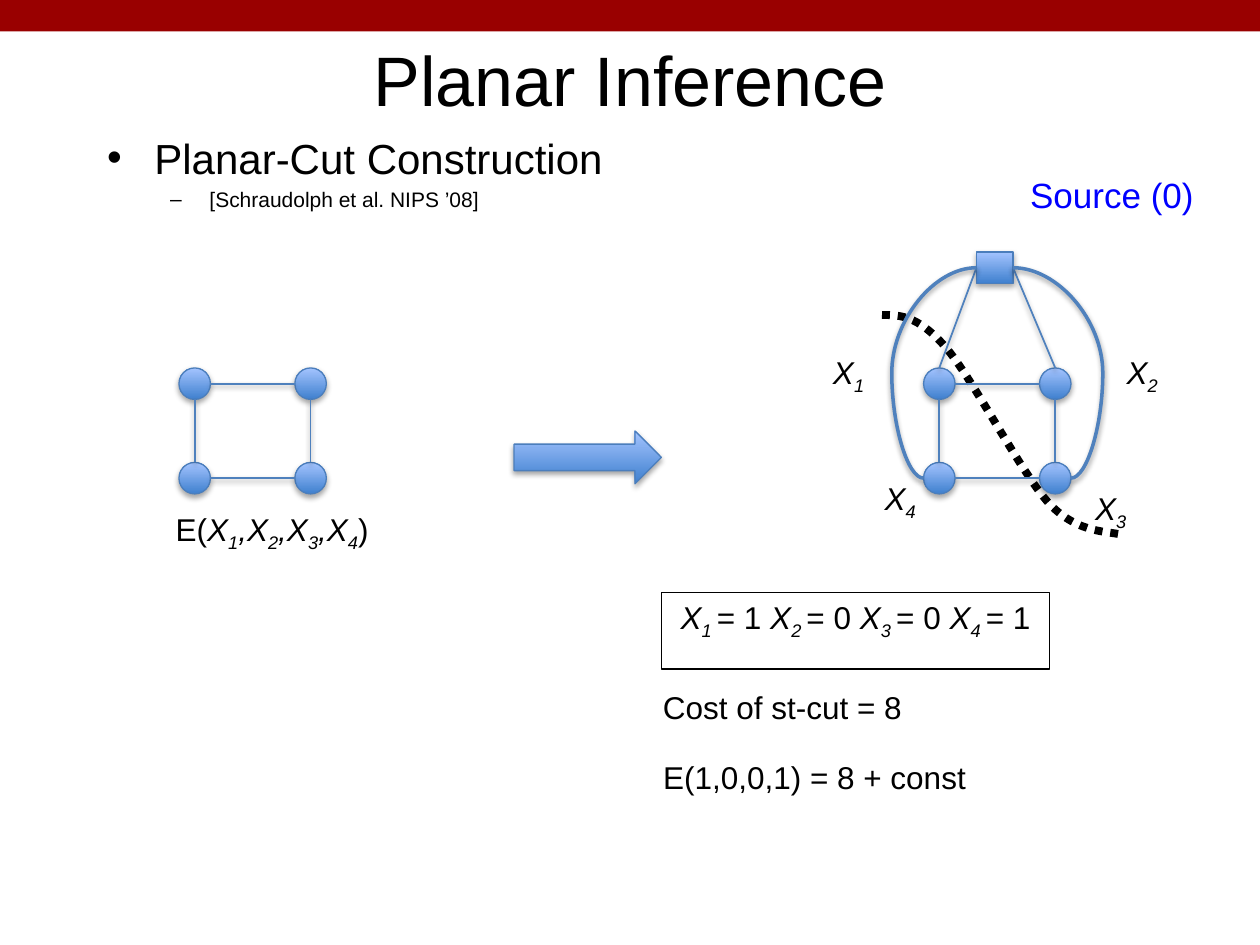
"""Build the Planar Inference slide with a planar-cut graph construction."""
import lxml.etree
import pptx
import pptx.dml.color
import pptx.enum.dml
import pptx.enum.shapes
import pptx.enum.text
import pptx.oxml.ns
import pptx.util

Inches = pptx.util.Inches
Pt = pptx.util.Pt
qn = pptx.oxml.ns.qn
SHAPES = pptx.enum.shapes.MSO_SHAPE
CONNECTORS = pptx.enum.shapes.MSO_CONNECTOR

COLORS = {
    "banner": "990000", "text": "000000", "source": "0000FF", "edge": "4F81BD",
    "outline": "4B7EBC", "dark": "3F80CE", "light": "A4C4FF",
}
NODE = 0.25
COLUMN_STEP, ROW_STEP = 0.92, 0.75
GRAPH_TOP = 2.92


def color(name):
    return pptx.dml.color.RGBColor.from_string(COLORS[name])


def variables(numbers, separator=""):
    runs = []
    for index, number in enumerate(numbers):
        runs += [((separator if index else "") + "X", "italic"), (str(number), "sub")]
    return runs


class SlideBuilder:
    def __init__(self, slide):
        self.slide = slide
        self.shapes = slide.shapes
        self.font_name = "Arial"

    def style(self, paragraph, size, color_name="text"):
        font = paragraph.font
        font.name, font.size = self.font_name, Pt(size)
        font.color.rgb = color(color_name)

    def place(self, shape, left, top, width, height):
        shape.left, shape.top = Inches(left), Inches(top)
        shape.width, shape.height = Inches(width), Inches(height)

    def title(self, text, box):
        shape = self.shapes.title
        self.place(shape, *box)
        shape.text_frame.text = text
        self.style(shape.text_frame.paragraphs[0], 40)

    def bullets(self, items, box):
        shape = self.slide.placeholders[1]
        self.place(shape, *box)
        frame = shape.text_frame
        for index, (text, level, size) in enumerate(items):
            paragraph = frame.add_paragraph() if index else frame.paragraphs[0]
            paragraph.text, paragraph.level = text, level
            if not index:
                paragraph.space_before = Pt(0)
            self.style(paragraph, size)

    def text(self, runs, box, size=18, color_name="text", wrap=True, border=False):
        shape = self.shapes.add_textbox(*map(Inches, box))
        shape.text_frame.word_wrap = wrap
        if not wrap:
            shape.text_frame.auto_size = pptx.enum.text.MSO_AUTO_SIZE.SHAPE_TO_FIT_TEXT
        paragraph = shape.text_frame.paragraphs[0]
        paragraph.alignment = pptx.enum.text.PP_ALIGN.CENTER
        self.style(paragraph, size, color_name)
        for words, kind in runs:
            run = paragraph.add_run()
            run.text = words
            if kind:
                run.font.italic = True
            if kind == "sub":
                run.font._element.set("baseline", "-25000")
        if border:
            shape.line.color.rgb = color("text")
            shape.line.width = Pt(0.75)

    def shadow(self, properties, distance, opacity):
        effects = properties.find(qn("a:effectLst"))
        if effects is None:
            effects = lxml.etree.SubElement(properties, qn("a:effectLst"))
        outer = lxml.etree.SubElement(
            effects, qn("a:outerShdw"), blurRad="40000", dist=str(distance),
            dir="5400000", rotWithShape="0")
        black = lxml.etree.SubElement(outer, qn("a:srgbClr"), val=COLORS["text"])
        lxml.etree.SubElement(black, qn("a:alpha"), val=str(opacity * 1000))

    def banner(self, box):
        shape = self.shapes.add_shape(SHAPES.RECTANGLE, *map(Inches, box))
        shape.fill.solid()
        shape.fill.fore_color.rgb = color("banner")
        shape.line.fill.background()
        shape.shadow.inherit = False

    def glossy(self, kind, box):
        shape = self.shapes.add_shape(kind, *map(Inches, box))
        shape.fill.gradient()
        shape.fill.gradient_angle = 90
        for stop, name in zip(shape.fill.gradient_stops, ("dark", "light")):
            stop.color.rgb = color(name)
        shape.line.color.rgb = color("outline")
        shape.line.width = Pt(0.75)
        shape.shadow.inherit = False
        self.shadow(shape._element.spPr, 23000, 35)
        return shape

    def edge(self, start, end, bulge=None):
        kind = CONNECTORS.CURVE if bulge else CONNECTORS.STRAIGHT
        connector = self.shapes.add_connector(kind, *map(Inches, start + end))
        connector.line.color.rgb = color("edge")
        connector.line.width = Pt(2 if bulge else 1)
        properties = connector._element.spPr
        if bulge:
            guides = properties.find(qn("a:prstGeom")).get_or_add_avLst()
            lxml.etree.SubElement(
                guides, qn("a:gd"), name="adj1", fmla=f"val {round(bulge * 100000)}")
        self.shadow(properties, 20000, 38)
        return connector

    def cut(self, points):
        corners = [(Inches(x), Inches(y)) for x, y in points]
        builder = self.shapes.build_freeform(*corners[0])
        builder.add_line_segments(corners[1:], close=False)
        shape = builder.convert_to_shape()
        outline = shape._element.find(".//" + qn("a:path"))
        segments = outline.findall(qn("a:lnTo"))
        for index in range(0, len(segments), 3):
            curve = lxml.etree.SubElement(outline, qn("a:cubicBezTo"))
            for segment in segments[index:index + 3]:
                curve.append(segment[0])
                outline.remove(segment)
        shape.fill.background()
        shape.line.color.rgb = color("text")
        shape.line.width = Pt(4.5)
        shape.line.dash_style = pptx.enum.dml.MSO_LINE.ROUND_DOT
        shape.shadow.inherit = False

    def grid_graph(self, left):
        right, bottom = left + COLUMN_STEP, GRAPH_TOP + ROW_STEP
        for y in (GRAPH_TOP, bottom):
            for x in (left, right):
                self.glossy(SHAPES.OVAL, (x, y, NODE, NODE))
            middle = y + NODE / 2
            self.edge((left + NODE, middle), (right, middle))
        for x in (left, right):
            center = x + NODE / 2
            self.edge((center, GRAPH_TOP + NODE), (center, bottom))

    def source_graph(self, left):
        self.grid_graph(left)
        right = left + COLUMN_STEP
        square_left, square_top, square_width = 7.75, 2, 0.29
        square = self.glossy(
            SHAPES.RECTANGLE, (square_left, square_top, square_width, NODE))
        middle = square_top + NODE / 2
        bottom = GRAPH_TOP + ROW_STEP + NODE / 2
        sides = ((1, square_left, left, left, 1.6),
                 (3, square_left + square_width, right, right + NODE, 1.55))
        for site, side, node, outer, bulge in sides:
            straight = self.edge((side, middle), (node + NODE / 2, GRAPH_TOP))
            straight.begin_connect(square, site)
            self.edge((side, middle), (outer, bottom), bulge)


def main():
    presentation = pptx.Presentation()
    presentation.slide_width, presentation.slide_height = Inches(10), Inches(7.5)
    builder = SlideBuilder(
        presentation.slides.add_slide(presentation.slide_layouts[1]))
    builder.banner((0, 0, 10, 0.25))
    builder.title("Planar Inference", (0.75, 0.25, 8.5, 0.75))
    builder.bullets([("Planar-Cut Construction", 0, 24),
                     ("[Schraudolph et al. NIPS ’08]", 1, 12)], (0.75, 1, 8.5, 6))

    builder.grid_graph(1.42)
    builder.text([("E(", "")] + variables(range(1, 5), ",") + [(")", "")],
                 (1.26, 4, 1.8, 0.4), wrap=False)
    builder.glossy(SHAPES.RIGHT_ARROW, (4.08, 3.42, 1.17, 0.42))

    builder.cut([(7, 2.5), (7.14, 2.5), (7.28, 2.5), (7.5, 2.75), (7.72, 3),
                 (8.1, 3.75), (8.33, 4), (8.57, 4.25), (8.82, 4.21), (8.92, 4.25)])
    builder.source_graph(7.33)
    builder.text([("Source (0)", "")], (8.04, 1.33, 1.57, 0.43), 20, "source", False)
    labels = ((6.42, 2.75), (8.75, 2.75), (8.5, 3.83), (6.83, 3.75))
    for number, (left, top) in enumerate(labels, 1):
        builder.text(variables([number]), (left, top, 0.63, 0.4))

    assignment = []
    for number, value in enumerate((1, 0, 0, 1), 1):
        gap = " " if number < 4 else ""
        assignment += [("X", "italic"), (f"{number} ", "sub"), (f"= {value}{gap}", "")]
    builder.text(assignment, (5.25, 4.7, 3.08, 0.61), border=True)
    builder.text([("Cost of st-cut = 8", "")], (4.75, 5.41, 2.92, 0.37))
    builder.text([("E(1,0,0,1) = 8 + const", "")], (5.15, 5.97, 2.63, 0.4), wrap=False)
    presentation.save("out.pptx")


if __name__ == "__main__":
    main()
